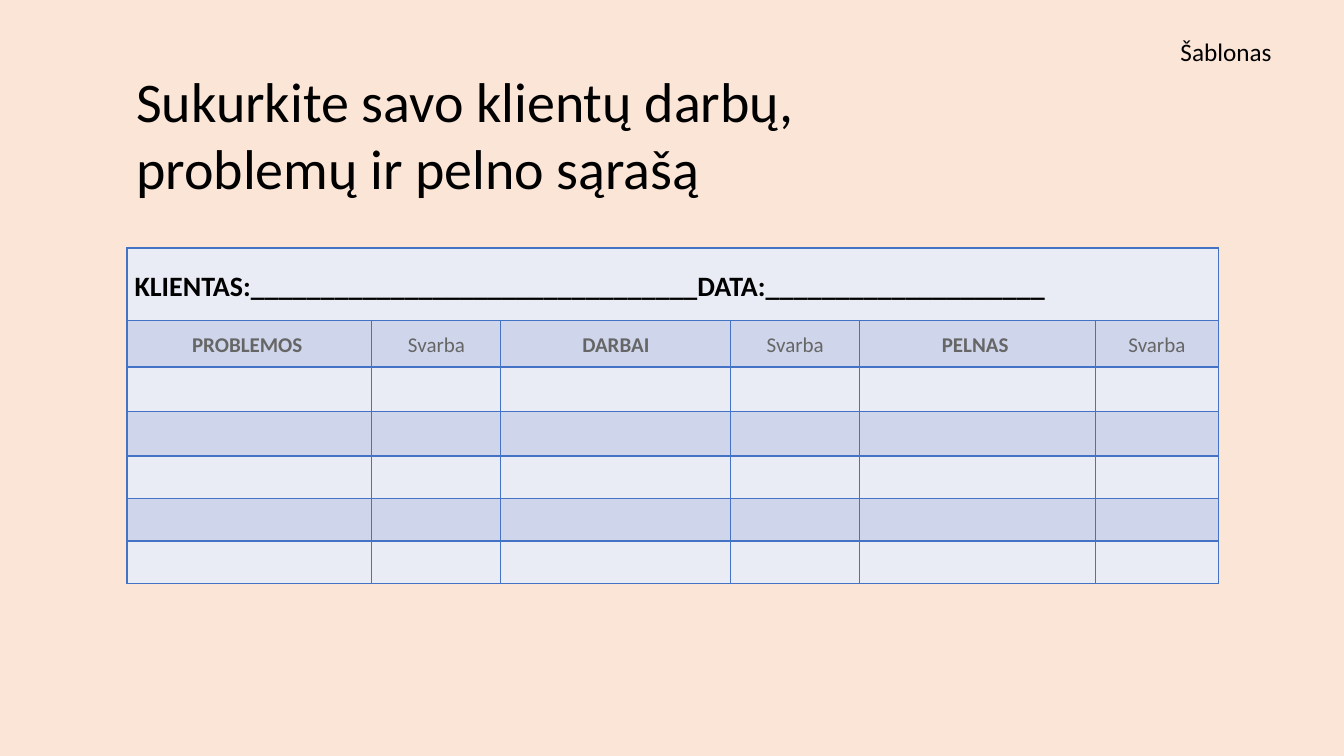
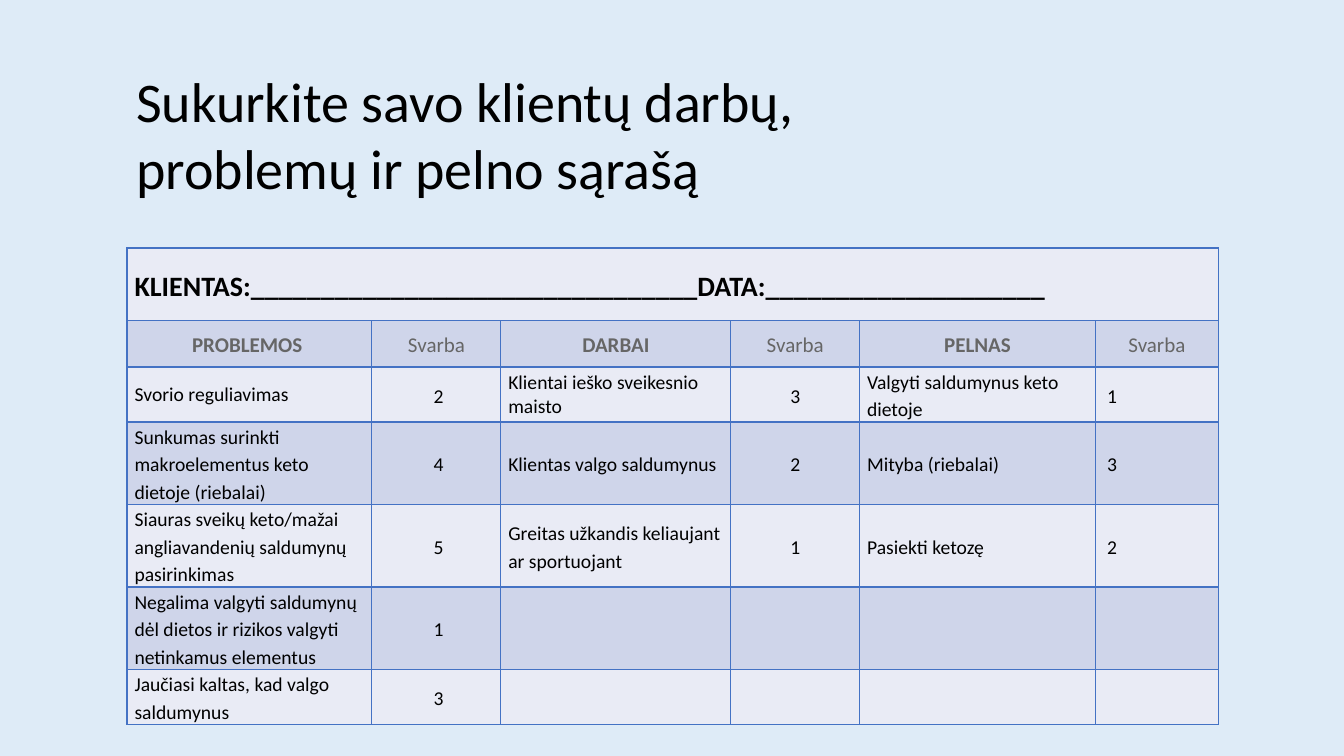
from dataclasses import dataclass, field
from typing import Any

from lxml import etree
from pptx import Presentation
from pptx.dml import color
from pptx.enum import text
from pptx.oxml import ns
from pptx.util import Cm, Pt

FONT = "Calibri"
BLACK, GREY, EDGE = "000000", "666666", "4472C4"
BANDS = "E9EBF5", "CFD5EA"
PEACH, SKY = "FBE5D6", "DEEBF7"
COLS = 6.17, 3.25, 5.79, 3.25, 5.94, 3.1
HEAD = 1.83, 1.17
LEFT, MID = text.PP_ALIGN.LEFT, text.PP_ALIGN.CENTER
TITLE = "Sukurkite savo klientų darbų, problemų ir pelno sąrašą"
CLIENT = "KLIENTAS:" + "_" * 32 + "DATA:" + "_" * 20
NAMES = "PROBLEMOS ", "Svarba", "DARBAI", "Svarba", "PELNAS", "Svarba"
BLANK = [[""] * len(COLS)] * 5
FILLED = [
    ["Svorio reguliavimas", "2", "Klientai ieško sveikesnio maisto", "3",
     "Valgyti saldumynus keto dietoje", "1"],
    ["Sunkumas surinkti makroelementus keto dietoje (riebalai)", "4",
     "Klientas valgo saldumynus", "2", "Mityba (riebalai)", "3"],
    ["Siauras sveikų keto/mažai angliavandenių saldumynų pasirinkimas", "5",
     "Greitas užkandis keliaujant ar sportuojant", "1", "Pasiekti ketozę", "2"],
    ["Negalima valgyti saldumynų dėl dietos ir rizikos valgyti netinkamus elementus",
     "1", "", "", "", ""],
    ["Jaučiasi kaltas, kad valgo saldumynus", "3", "", "", "", ""],
]


def rgb(code):
    """Turn a hex string into a colour."""
    return color.RGBColor.from_string(code)


@dataclass
class Deck:
    """Hold the style and the current slide."""

    prs: Any = field(default_factory=Presentation)
    slide: Any = None

    def size(self, wide, high):
        """Set the slide size."""
        self.prs.slide_width, self.prs.slide_height = Cm(wide), Cm(high)

    def put(self, frame, words, size, ink=BLACK, bold=False, align=LEFT, gap=1.0):
        """Put one formatted paragraph into a text frame."""
        frame.text = words
        para = frame.paragraphs[0]
        para.alignment, para.line_spacing = align, gap
        for run in para.runs:
            font = run.font
            font.name, font.size, font.bold = FONT, Pt(size), bold
            font.color.rgb = rgb(ink)

    def page(self, back, words):
        """Start a slide with its background and title."""
        self.slide = self.prs.slides.add_slide(self.prs.slide_layouts[5])
        fill = self.slide.background.fill
        fill.solid()
        fill.fore_color.rgb = rgb(back)
        title = self.slide.shapes.title
        title.left, title.top = Cm(3.18), Cm(1.55)
        title.width, title.height = Cm(21.3), Cm(3.66)
        frame = title.text_frame
        frame.auto_size = text.MSO_AUTO_SIZE.NONE
        frame.vertical_anchor = text.MSO_ANCHOR.TOP
        self.put(frame, words, 40)

    def label(self, words, left, top, wide, high):
        """Add a small unwrapped text box."""
        box = self.slide.shapes.add_textbox(Cm(left), Cm(top), Cm(wide), Cm(high))
        box.text_frame.word_wrap = False
        self.put(box.text_frame, words, 18)

    def cell(self, cell, band, pad):
        """Give a cell its borders, fill and margins."""
        props = cell._tc.get_or_add_tcPr()
        for side in "LRTB":
            line = etree.SubElement(props, ns.qn(f"a:ln{side}"), w=str(Pt(1)))
            fill = etree.SubElement(line, ns.qn("a:solidFill"))
            etree.SubElement(fill, ns.qn("a:srgbClr"), val=EDGE)
        cell.fill.solid()
        cell.fill.fore_color.rgb = rgb(BANDS[band])
        cell.vertical_anchor = text.MSO_ANCHOR.MIDDLE
        cell.margin_left, cell.margin_right = Cm(pad), Cm(0.18)
        cell.margin_top = cell.margin_bottom = 0

    def table(self, names, body, highs, tight=()):
        """Add the client table; tight lists the single-spaced body cells."""
        highs = HEAD + highs
        grid = self.slide.shapes.add_table(
            len(highs), len(COLS), Cm(3.2), Cm(6.25),
            Cm(sum(COLS)), Cm(sum(highs))).table
        grid.first_row = grid.horz_banding = False
        for col, wide in zip(grid.columns, COLS):
            col.width = Cm(wide)
        for row, high in zip(grid.rows, highs):
            row.height = Cm(high)
        for r in range(len(highs)):
            for c in range(len(COLS)):
                pad = 0.3 if r > 1 and c in (1, 5) else 0.19
                self.cell(grid.cell(r, c), r % 2, pad)
        grid.cell(0, 0).merge(grid.cell(0, len(COLS) - 1))
        self.put(grid.cell(0, 0).text_frame, CLIENT, 20, bold=True, gap=1.15)
        for c, name in enumerate(names):
            self.put(grid.cell(1, c).text_frame, name, 15, GREY,
                     c % 2 == 0, MID, 1.15)
        for r, row in enumerate(body):
            for c, words in enumerate(row):
                self.put(grid.cell(r + 2, c).text_frame, words, 14,
                         align=MID if c in (1, 3) else LEFT,
                         gap=1.0 if (r, c) in tight else 1.15)


def main():
    """Build both slides."""
    deck = Deck()
    deck.size(33.87, 19.05)
    deck.page(PEACH, TITLE)
    deck.table(NAMES[:4] + ("PELNAS ", "Svarba"), BLANK,
               (1.12, 1.12, 1.07, 1.07, 1.07))
    deck.label("Šablonas", 29.5, 0.8, 2.85, 1.03)
    deck.page(SKY, TITLE)
    deck.table(NAMES, FILLED, (1.38, 2.08, 2.08, 2.08, 1.38), {(0, 0), (0, 2)})
    deck.prs.save("out.pptx")


if __name__ == "__main__":
    main()
